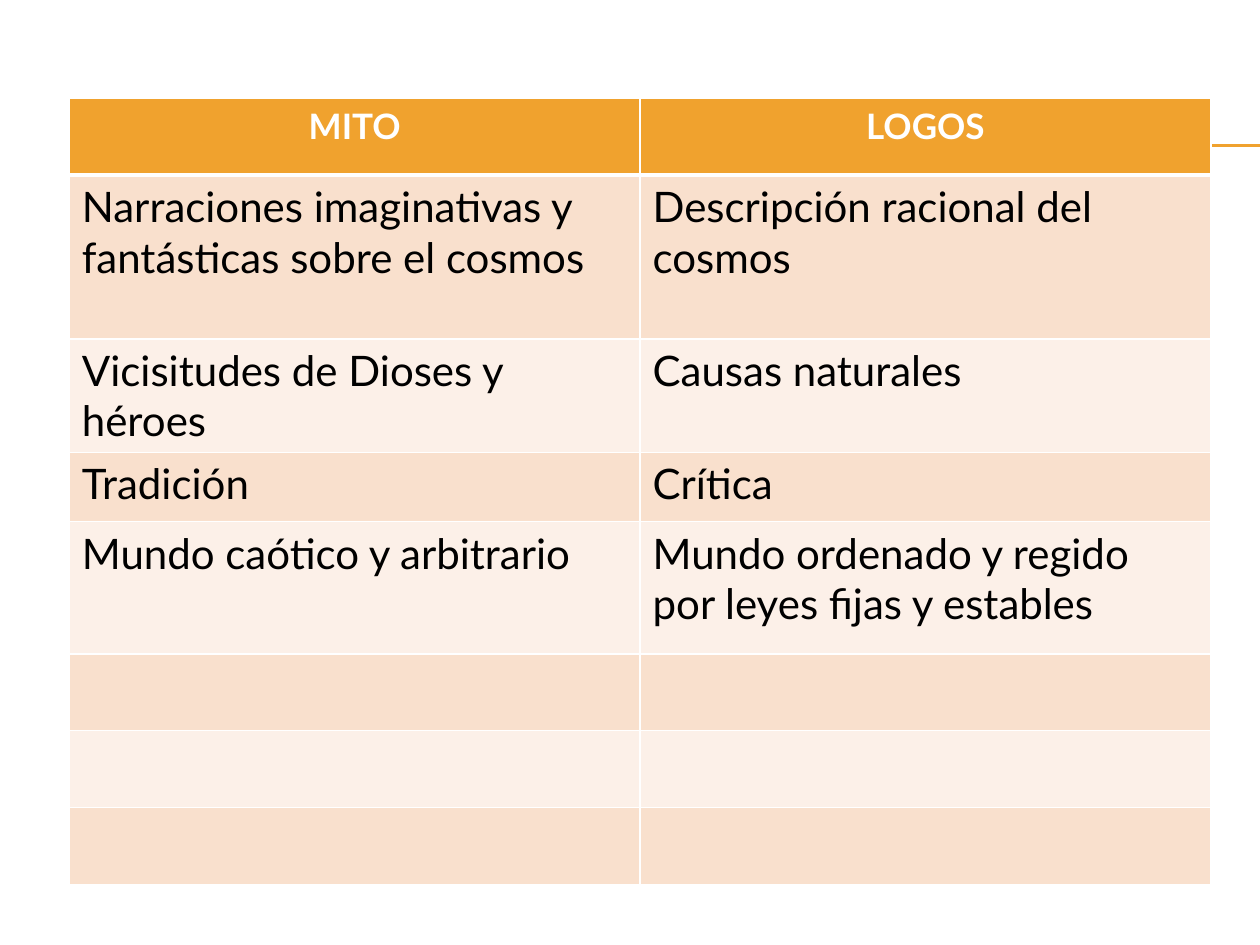
"""Slide comparing myth and logos in a two-column table."""
from pptx import Presentation, util as u
from pptx.dml.color import RGBColor
from pptx.enum import shapes, text
from pptx.oxml import parse_xml
from pptx.oxml.ns import nsdecls

ORANGE = RGBColor(0xF0, 0xA2, 0x2E)
PEACH = RGBColor(0xF9, 0xE0, 0xCD)
CREAM = RGBColor(0xFC, 0xF0, 0xE8)
WHITE = RGBColor(0xFF, 0xFF, 0xFF)
BLACK = RGBColor(0, 0, 0)

WIDTH, HEIGHT = u.Inches(10), u.Inches(7.5)
HEADER_FONT = {"name": "Lato", "size": u.Pt(20), "bold": True}
BODY_FONT = {"name": "Lato", "size": u.Pt(24), "bold": False}

CONTRASTS = [
    ("MITO", "LOGOS"),
    ("Narraciones imaginativas y fantásticas sobre el cosmos",
     "Descripción racional del cosmos"),
    ("Vicisitudes de Dioses y héroes", "Causas naturales"),
    ("Tradición", "Crítica"),
    ("Mundo caótico y arbitrario",
     "Mundo ordenado y regido por leyes fijas y estables"),
    ("", ""),
    ("", ""),
    ("", ""),
]
ROW_UNITS = [0.61, 1.3, 0.9, 0.55, 1.05, 0.61, 0.61, 0.61]


def set_borders(cell, widths):
    """Draw white borders of the given point widths, keyed by side."""
    properties = cell._tc.get_or_add_tcPr()
    for position, (side, width) in enumerate(widths.items()):
        properties.insert(position, parse_xml(
            f'<a:ln{side} {nsdecls("a")} w="{u.Pt(width)}"><a:solidFill>'
            f'<a:srgbClr val="{WHITE}"/></a:solidFill></a:ln{side}>'))


def format_cell(cell, wording, row):
    """Fill one cell with its wording, band colour, font and borders."""
    header = row == 0
    cell.fill.solid()
    cell.fill.fore_color.rgb = ORANGE if header else (CREAM, PEACH)[row % 2]
    set_borders(cell, {"L": 1, "R": 1, "T": 3 if row == 1 else 1,
                       "B": 3 if header else 1})
    if not wording:
        return
    cell.text = wording
    paragraph = cell.text_frame.paragraphs[0]
    paragraph.alignment = text.PP_ALIGN.CENTER if header else text.PP_ALIGN.LEFT
    font = paragraph.runs[0].font
    for attribute, value in (HEADER_FONT if header else BODY_FONT).items():
        setattr(font, attribute, value)
    font.color.rgb = WHITE if header else BLACK


def add_rules(slide, left, top, width, gap):
    """Draw the pair of thin rules from the left edge of the box."""
    for y in (top, top + gap):
        rule = slide.shapes.add_connector(
            shapes.MSO_CONNECTOR.STRAIGHT, left, y, left + width, y)
        rule.line.color.rgb = ORANGE
        rule.line.width = u.Pt(0.75)
        rule._element.spPr.append(parse_xml(f'<a:effectLst {nsdecls("a")}/>'))


def add_contrast_table(slide, left, top, width, height):
    """Place the comparison table, sharing the box height by row units."""
    table = slide.shapes.add_table(
        len(CONTRASTS), 2, left, top, width, height).table
    for column in table.columns:
        column.width = width // 2
    for row, (pair, units) in enumerate(zip(CONTRASTS, ROW_UNITS)):
        table.rows[row].height = int(height * units / sum(ROW_UNITS))
        for column, wording in enumerate(pair):
            format_cell(table.cell(row, column), wording, row)


def main():
    """Build and save the slide."""
    deck = Presentation()
    deck.slide_width, deck.slide_height = WIDTH, HEIGHT
    slide = deck.slides.add_slide(deck.slide_layouts[6])
    margin = u.Inches(0.56)
    add_rules(slide, margin, u.Inches(1.15), WIDTH - margin, u.Inches(0.01))
    add_contrast_table(slide, u.Inches(0.55), u.Inches(0.78),
                       u.Inches(9.06), u.Inches(sum(ROW_UNITS)))
    deck.save("out.pptx")


if __name__ == "__main__":
    main()
